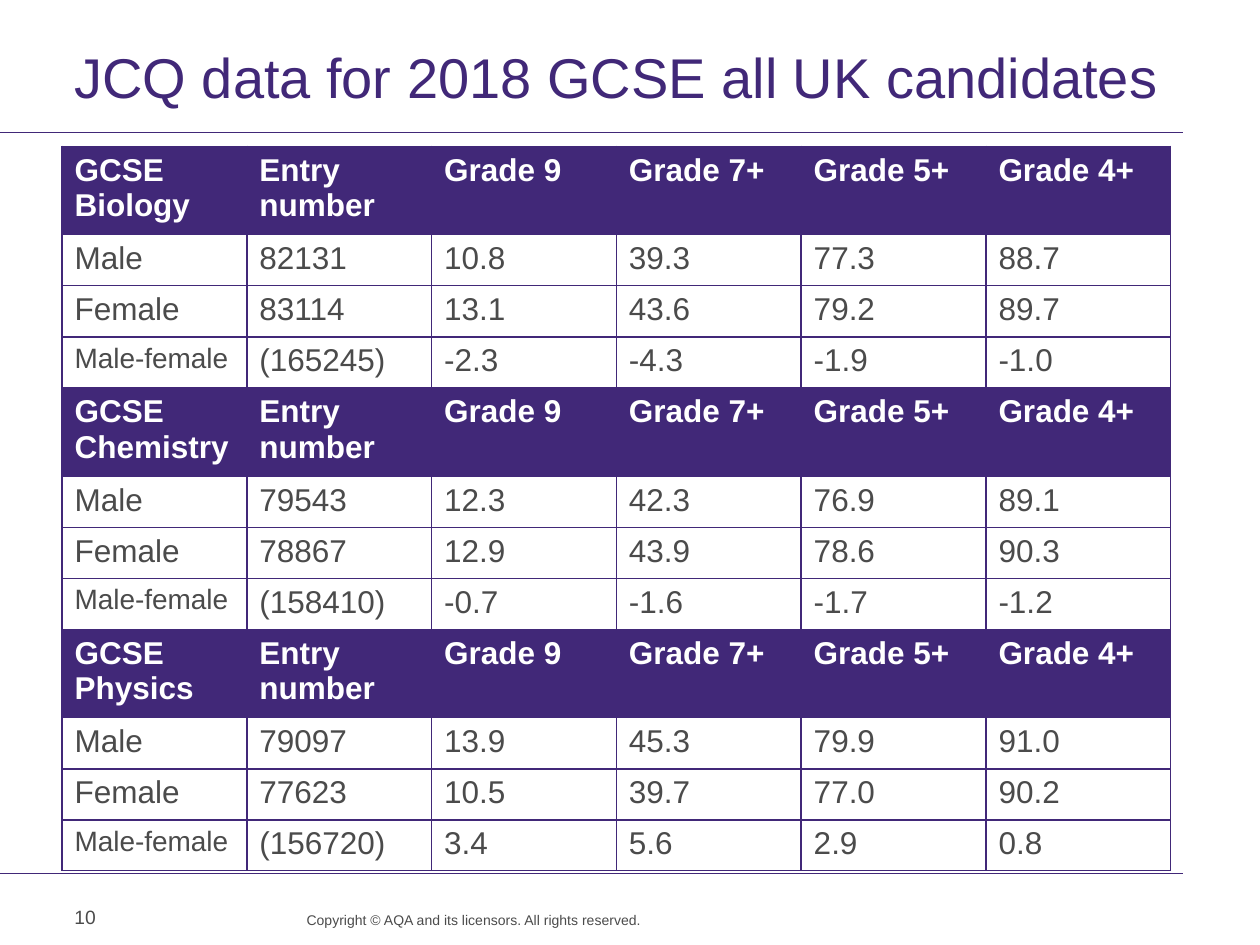
from lxml.etree import SubElement
from pptx import Presentation
from pptx.dml.color import RGBColor
from pptx.enum.shapes import MSO_CONNECTOR
from pptx.enum.text import MSO_ANCHOR, PP_ALIGN
from pptx.oxml.ns import qn
from pptx.util import Cm, Pt

PURPLE, GREY, WHITE = "412878", "4B4B4B", "FFFFFF"
HEADINGS = ["Entry number", "Grade 9", "Grade 7+", "Grade 5+", "Grade 4+"]
ROW_NAMES = ["Male", "Female", "Male-female"]
TABLE_LEFT, TABLE_WIDTH = 1.25, 22.35
HEADER_HEIGHT, ROW_HEIGHT, LAST_ROW_HEIGHT = 1.67, 1.03, 0.97

# subject, top, height of last row, results for each row name
SUBJECTS = [
    ("Biology", 2.95, ROW_HEIGHT, [
        ["82131", "10.8", "39.3", "77.3", "88.7"],
        ["83114", "13.1", "43.6", "79.2", "89.7"],
        ["(165245)", "-2.3", "-4.3", "-1.9", "-1.0"]]),
    ("Chemistry", 7.82, ROW_HEIGHT, [
        ["79543", "12.3", "42.3", "76.9", "89.1"],
        ["78867", "12.9", "43.9", "78.6", "90.3"],
        ["(158410)", "-0.7", "-1.6", "-1.7", "-1.2"]]),
    ("Physics", 12.69, LAST_ROW_HEIGHT, [
        ["79097", "13.9", "45.3", "79.9", "91.0"],
        ["77623", "10.5", "39.7", "77.0", "90.2"],
        ["(156720)", "3.4", "5.6", "2.9", "0.8"]]),
]


def colour(hex_string):
    return RGBColor.from_string(hex_string)


class SlideBuilder:
    font_name = "Arial"

    def __init__(self, slide):
        self.slide = slide

    def run(self, paragraph, text, size, hex_string, bold=False):
        run = paragraph.add_run()
        run.text = text
        run.font.name = self.font_name
        run.font.size = Pt(size)
        run.font.bold = bold
        run.font.color.rgb = colour(hex_string)

    def text(self, text, left, top, width, height, size, hex_string,
             margins=None, spacing=None, align=PP_ALIGN.LEFT,
             anchor=MSO_ANCHOR.TOP):
        """Add a text box; margins are left, top, right, bottom in cm."""
        shape = self.slide.shapes.add_textbox(
            Cm(left), Cm(top), Cm(width), Cm(height))
        frame = shape.text_frame
        frame.word_wrap = True
        frame.vertical_anchor = anchor
        if margins:
            (frame.margin_left, frame.margin_top,
             frame.margin_right, frame.margin_bottom) = map(Cm, margins)
        paragraph = frame.paragraphs[0]
        paragraph.alignment = align
        if spacing:
            paragraph.line_spacing = Pt(spacing)
        self.run(paragraph, text, size, hex_string)

    def rule(self, top, width):
        connector = self.slide.shapes.add_connector(
            MSO_CONNECTOR.STRAIGHT, Cm(0), Cm(top), Cm(width), Cm(top))
        connector.line.color.rgb = colour(PURPLE)
        connector.line.width = Pt(0.6)
        SubElement(connector._element.spPr, qn("a:effectLst"))

    def cell_borders(self, cell):
        properties = cell._tc.get_or_add_tcPr()
        for side in ("a:lnL", "a:lnR", "a:lnT", "a:lnB"):
            line = SubElement(properties, qn(side), w=str(Pt(1)))
            fill = SubElement(line, qn("a:solidFill"))
            SubElement(fill, qn("a:srgbClr"), val=PURPLE)

    def table(self, rows, top, heights):
        """Add a table with a purple header row and equal columns."""
        column_count = len(rows[0])
        table = self.slide.shapes.add_table(
            len(rows), column_count, Cm(TABLE_LEFT), Cm(top),
            Cm(TABLE_WIDTH), Cm(sum(heights))).table
        table.horz_banding = False
        for column in table.columns:
            column.width = Cm(TABLE_WIDTH / column_count)
        for row_index, (values, height) in enumerate(zip(rows, heights)):
            table.rows[row_index].height = Cm(height)
            header = row_index == 0
            for column_index, value in enumerate(values):
                cell = table.cell(row_index, column_index)
                self.cell_borders(cell)
                cell.fill.solid()
                cell.fill.fore_color.rgb = colour(PURPLE if header else WHITE)
                self.run(cell.text_frame.paragraphs[0], value,
                         16 if value == "Male-female" else 18,
                         WHITE if header else GREY, bold=header)


def main():
    presentation = Presentation()
    presentation.slide_width, presentation.slide_height = Cm(25.4), Cm(19.05)
    builder = SlideBuilder(
        presentation.slides.add_slide(presentation.slide_layouts[6]))

    for top in (2.67, 17.6):
        builder.rule(top, 23.85)
    builder.text("JCQ data for 2018 GCSE all UK candidates",
                 1.5, 1.22, 22.35, 1.2, 32, PURPLE,
                 margins=(0, 0, 0.25, 0), spacing=28)
    builder.text("10", 1.25, 17.98, 1.93, 1.02, 11, GREY,
                 anchor=MSO_ANCHOR.MIDDLE)
    for subject, top, last_height, results in SUBJECTS:
        rows = [[f"GCSE {subject}"] + HEADINGS]
        rows += [[name] + values for name, values in zip(ROW_NAMES, results)]
        builder.table(rows, top,
                      [HEADER_HEIGHT, ROW_HEIGHT, ROW_HEIGHT, last_height])
    builder.text("Copyright © AQA and its licensors. All rights reserved.",
                 5.49, 18.36, 7.44, 0.66, 8, GREY,
                 margins=(0, 0, 0, 0), spacing=10, align=PP_ALIGN.RIGHT)
    presentation.save("out.pptx")


if __name__ == "__main__":
    main()
